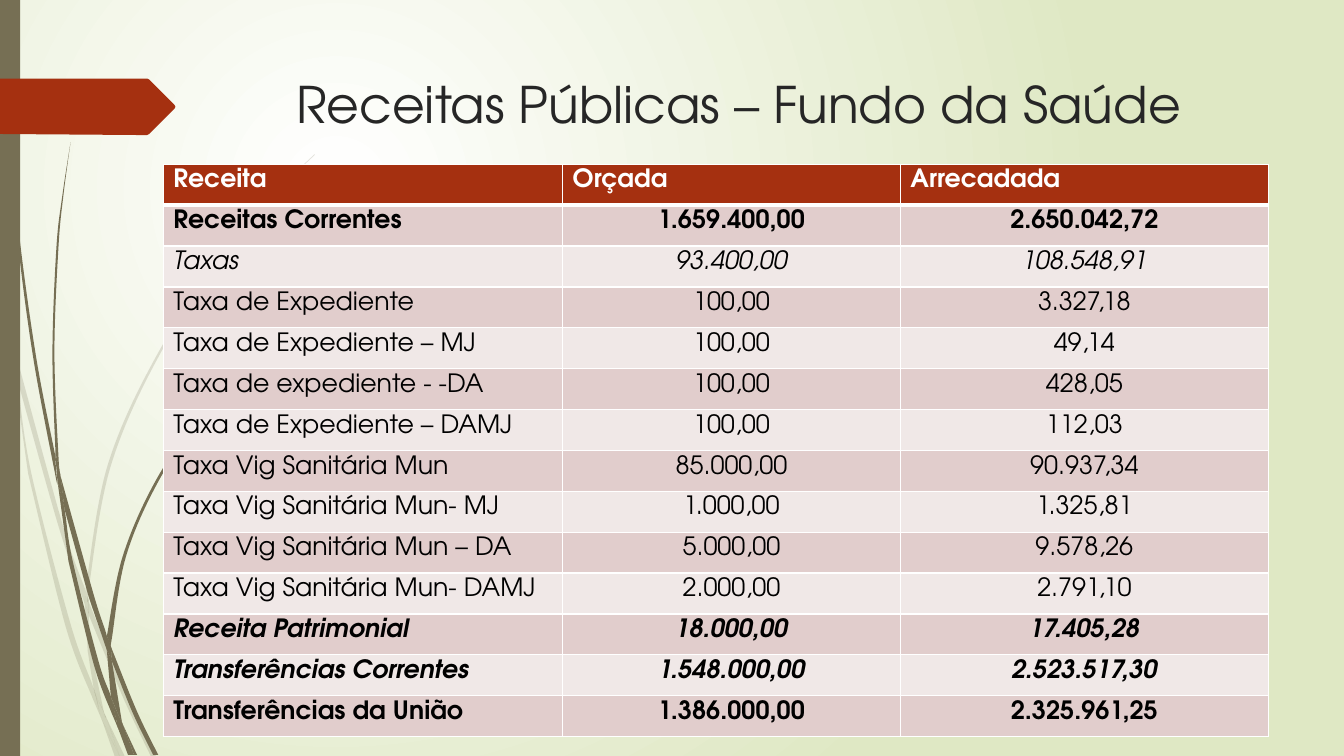
"""Build the slide with the health fund's public revenue table."""
import pptx
import pptx.dml.color
import pptx.enum.shapes
import pptx.enum.text
import pptx.oxml
import pptx.oxml.ns
import pptx.util
from pptx.util import Inches

RGBColor = pptx.dml.color.RGBColor
WHITE = RGBColor(0xFF, 0xFF, 0xFF)
BLACK = RGBColor(0, 0, 0)
INK = RGBColor(0x26, 0x26, 0x26)
RUST = RGBColor(0xA5, 0x30, 0x10)
OLIVE = RGBColor(0x76, 0x6F, 0x54)
PALE_GREEN = RGBColor(0xDF, 0xE8, 0xC4)
BANDS = (RGBColor(0xE1, 0xCD, 0xCC), RGBColor(0xF0, 0xE8, 0xE7))
NAMESPACE = pptx.oxml.ns.nsdecls("a")

PLAIN, BOLD, ITALIC, BOLD_ITALIC = (
    {}, {"bold": True}, {"italic": True}, {"bold": True, "italic": True})
HEADINGS = ("Receita", "Orçada", "Arrecadada")
REVENUES = (
    (BOLD, "Receitas Correntes", "1.659.400,00", "2.650.042,72"),
    (ITALIC, "Taxas", "93.400,00", "108.548,91"),
    (PLAIN, "Taxa de Expediente", "100,00", "3.327,18"),
    (PLAIN, "Taxa de Expediente – MJ", "100,00", "49,14"),
    (PLAIN, "Taxa de expediente - -DA", "100,00", "428,05"),
    (PLAIN, "Taxa de Expediente – DAMJ", "100,00", "112,03"),
    (PLAIN, "Taxa Vig Sanitária Mun", "85.000,00", "90.937,34"),
    (PLAIN, "Taxa Vig Sanitária Mun- MJ", "1.000,00", "1.325,81"),
    (PLAIN, "Taxa Vig Sanitária Mun – DA", "5.000,00", "9.578,26"),
    (PLAIN, "Taxa Vig Sanitária Mun- DAMJ", "2.000,00", "2.791,10"),
    (BOLD_ITALIC, "Receita Patrimonial", "18.000,00", "17.405,28"),
    (BOLD_ITALIC, "Transferências Correntes", "1.548.000,00", "2.523.517,30"),
    (BOLD, "Transferências da União", "1.386.000,00", "2.325.961,25"),
)

FAINT_BLADES = (
    (((0.11, 3.5), (0.09, 3.22), (0, 2.82)), ((0, 2.99), (0.1, 3.44))),
    (((0.14, 3.45), (0.62, 5.2), (0.85, 5.86)),
     ((0.84, 5.99), (0.58, 5.22), (0.17, 3.76))),
    (((0.88, 5.96), (0.92, 6.07), (1.27, 6.92), (1.55, 7.51)),
     ((1.5, 7.51), (1.23, 6.94), (0.88, 6.1))),
    (((1.05, 7.11), (1.24, 7.51)), ((1.19, 7.51),)),
    (((0.11, 3.5), (0.17, 3.76), (0.31, 4.69), (0.7, 6.19), (0.93, 6.83),
      (0.99, 7.07), (1.01, 7.14)),
     ((0.92, 6.93), (0.65, 6.21), (0.28, 4.7))),
    (((0.84, 5.99), (0.88, 6.08), (0.88, 6.1), (0.91, 6.46), (1.03, 7.06),
      (1.05, 7.11)),
     ((0.96, 6.92), (0.93, 6.83), (0.87, 6.46))),
    (((0.88, 5.96), (0.88, 5.84), (1.1, 4.62), (1.6, 3.49), (2.29, 2.45),
      (2.68, 1.98), (2.9, 1.75), (3.12, 1.54)),
     ((3.12, 1.53), (2.89, 1.75), (2.68, 1.97), (2.28, 2.44), (1.58, 3.48),
      (1.07, 4.61), (0.85, 5.84))),
    (((1.01, 7.14), (1.14, 7.51)), ((1.19, 7.51),)),
    (((0.85, 5.86), (0.88, 5.96), (0.88, 6.1)), ((0.88, 6.08), (0.84, 5.99))),
    (((0.93, 6.83), (0.96, 6.92), (1.05, 7.11), (1.19, 7.51)),
     ((1.01, 7.14), (0.99, 7.07))),
)
SOLID_BLADES = (
    (((0.04, 0), (0.05, 0.48), (0.08, 1.09), (0.19, 2.32), (0.36, 3.55),
      (0.55, 4.53), (0.55, 4.57), (0.57, 4.81)),
     ((0.56, 4.77), (0.33, 3.55), (0.17, 2.33), (0.07, 1.1), (0.04, 0.48),
      (0.03, 0))),
    (((0.6, 4.72), (0.93, 5.9), (1.06, 6.31), (1.06, 6.45)),
     ((0.88, 5.92), (0.64, 5.05))),
    (((1.1, 6.41), (1.13, 6.49), (1.36, 7.06), (1.57, 7.49)),
     ((1.52, 7.49), (1.32, 7.08), (1.11, 6.56))),
    (((0.57, 4.77), (0.64, 5.05), (0.72, 5.56), (0.98, 6.57), (1.1, 6.91),
      (1.16, 7.17), (1.17, 7.22)),
     ((1.11, 7.08), (0.93, 6.59), (0.68, 5.57))),
    (((0.6, 4.72), (0.58, 4.53), (0.54, 3.49), (0.58, 2.45), (0.63, 1.93),
      (0.7, 1.41)),
     ((0.7, 1.41), (0.62, 1.93), (0.56, 2.45), (0.52, 3.49), (0.55, 4.49))),
    (((1.22, 7.19), (1.36, 7.49)), ((1.33, 7.49),)),
    (((0.55, 4.49), (0.6, 4.72), (0.64, 5.05)), ((0.57, 4.77), (0.55, 4.53))),
    (((1.1, 6.41), (1.11, 6.33), (1.25, 5.52), (1.58, 4.76), (2.05, 4.06),
      (2.31, 3.74), (2.45, 3.59), (2.61, 3.44)),
     ((2.6, 3.44), (2.45, 3.58), (2.31, 3.73), (2.04, 4.05), (1.56, 4.74),
      (1.22, 5.51), (1.06, 6.31))),
    (((1.17, 7.22), (1.31, 7.49)), ((1.27, 7.49),)),
    (((1.06, 6.45), (1.09, 6.51), (1.11, 6.56), (1.21, 7.16), (1.22, 7.19)),
     ((1.16, 7.06), (1.1, 6.91))),
    (((1.06, 6.31), (1.1, 6.41), (1.11, 6.56)), ((1.09, 6.51), (1.06, 6.45))),
    (((1.1, 6.91), (1.16, 7.06), (1.22, 7.19), (1.33, 7.49)),
     ((1.3, 7.49), (1.17, 7.22), (1.16, 7.17))),
)
ARROW = ((0, 0.78), (1.46, 0.78), (1.48, 0.79), (1.73, 1.04), (1.74, 1.06),
         (1.73, 1.08), (1.48, 1.33), (1.46, 1.34), (1.36, 1.34), (0, 1.33))


def write(frame, text, size=18, color=BLACK, align="LEFT", bold=False,
          italic=False, font="TeX Gyre Adventor"):
    para = frame.paragraphs[0]
    para.alignment = getattr(pptx.enum.text.PP_ALIGN, align)
    span = para.add_run()
    span.text = text
    span.font.name, span.font.size = font, pptx.util.Pt(size)
    span.font.bold, span.font.italic = bold, italic
    span.font.color.rgb = color


def bend(shape, edge_sizes):
    nodes = list(shape.element.iter(pptx.oxml.ns.qn("a:pt")))
    points = [(int(node.get("x")), int(node.get("y"))) for node in nodes]
    first = 0
    for size in edge_sizes:
        edge = points[first:first + size]
        padded = [edge[0], *edge, edge[-1]]
        for index in range(1, size):
            a, b, c, d = padded[index - 1:index + 3]
            leave = [q + (r - p) / 6 for p, q, r in zip(a, b, c)]
            arrive = [r - (s - q) / 6 for q, r, s in zip(b, c, d)]
            controls = "".join(f'<a:pt x="{round(x)}" y="{round(y)}"/>'
                               for x, y in (leave, arrive, c))
            line = nodes[first + index].getparent()
            line.getparent().replace(line, pptx.oxml.parse_xml(
                f'<a:cubicBezTo {NAMESPACE}>{controls}</a:cubicBezTo>'))
        first += size


class Painter:
    def __init__(self, deck):
        self.page = deck.slides.add_slide(deck.slide_layouts[6])

    def background(self, center, edge):
        fill = self.page.background.fill
        fill.gradient()
        for stop, color in zip(fill.gradient_stops, (center, edge)):
            stop.color.rgb = color
        linear = next(self.page.element.iter(pptx.oxml.ns.qn("a:lin")))
        linear.getparent().replace(linear, pptx.oxml.parse_xml(
            f'<a:path {NAMESPACE} path="circle"><a:fillToRect l="50000" '
            't="50000" r="100000" b="100000"/></a:path>'))

    def paint(self, shape, color, alpha=100):
        shape.shadow.inherit = False
        shape.line.fill.background()
        shape.fill.solid()
        shape.fill.fore_color.rgb = color
        if alpha < 100:
            tint = next(shape.element.spPr.iter(pptx.oxml.ns.qn("a:srgbClr")))
            tint.append(pptx.oxml.parse_xml(
                f'<a:alpha {NAMESPACE} val="{alpha * 1000}"/>'))

    def outline(self, points, color, alpha=100):
        start, *rest = [(Inches(x), Inches(y)) for x, y in points]
        builder = self.page.shapes.build_freeform(*start)
        builder.add_line_segments(rest, close=True)
        shape = builder.convert_to_shape()
        self.paint(shape, color, alpha)
        return shape

    def blades(self, blades, alpha=100):
        for near, far in blades:
            bend(self.outline(near + far, OLIVE, alpha), (len(near), len(far)))

    def bar(self, left, top, width, height, color):
        self.paint(self.page.shapes.add_shape(
            pptx.enum.shapes.MSO_SHAPE.RECTANGLE, Inches(left), Inches(top),
            Inches(width), Inches(height)), color)

    def title(self, text, left, top, width, height):
        box = self.page.shapes.add_textbox(
            Inches(left), Inches(top), Inches(width), Inches(height))
        box.text_frame.word_wrap = True
        write(box.text_frame, text, size=36, color=INK)

    def cell(self, cell, text, fill, bottom=1, **style):
        for side, width in (("L", 1), ("R", 1), ("T", 1), ("B", bottom)):
            cell._tc.get_or_add_tcPr().append(pptx.oxml.parse_xml(
                f'<a:ln{side} {NAMESPACE} w="{pptx.util.Pt(width)}"><a:solidFill>'
                f'<a:srgbClr val="{WHITE}"/></a:solidFill></a:ln{side}>'))
        cell.fill.solid()
        cell.fill.fore_color.rgb = fill
        write(cell.text_frame, text, **style)

    def table(self, left, top, widths, height):
        grid = self.page.shapes.add_table(
            len(REVENUES) + 1, len(widths), Inches(left), Inches(top),
            Inches(sum(widths)), Inches(height)).table
        grid.first_row = grid.horz_banding = False
        for column, (width, heading) in enumerate(zip(widths, HEADINGS)):
            grid.columns[column].width = Inches(width)
            self.cell(grid.cell(0, column), heading, RUST, bottom=3,
                      color=WHITE, bold=True)
        for row, (style, *texts) in enumerate(REVENUES, 1):
            for column, text in enumerate(texts):
                self.cell(grid.cell(row, column), text, BANDS[(row - 1) % 2],
                          align="CENTER" if column else "LEFT", **style)


def main():
    deck = pptx.Presentation()
    deck.slide_width, deck.slide_height = Inches(13.33), Inches(7.5)
    painter = Painter(deck)
    painter.background(WHITE, PALE_GREEN)
    painter.blades(FAINT_BLADES, alpha=20)
    painter.blades(SOLID_BLADES)
    painter.bar(0, 0, 0.2, 7.5, OLIVE)
    painter.outline(ARROW, RUST)
    painter.title("Receitas Públicas – Fundo da Saúde", 2.84, 0.68, 9.75, 1.4)
    painter.table(1.62, 1.63, (3.96, 3.35, 3.65), 5.68)
    deck.save("out.pptx")


if __name__ == "__main__":
    main()
